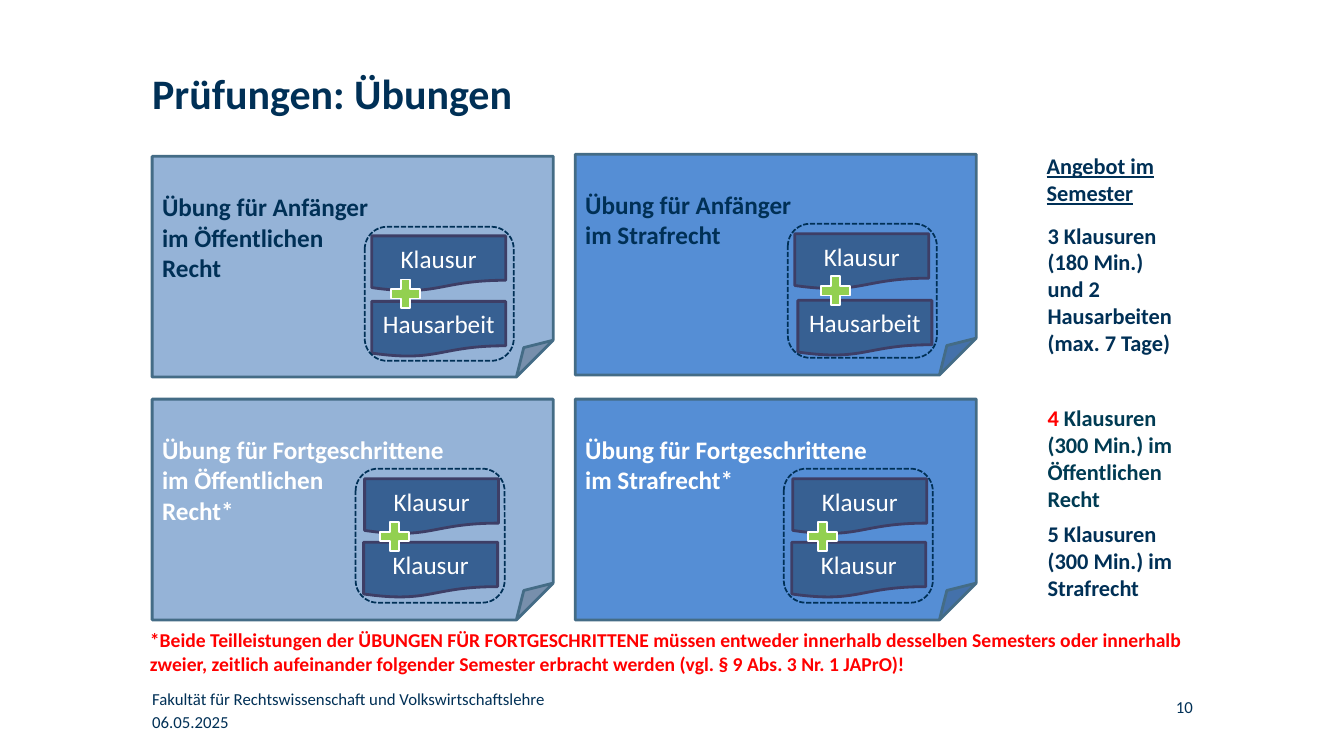
import pptx
import pptx.dml.color
import pptx.enum.dml
import pptx.enum.shapes
import pptx.enum.text
import pptx.util

SHAPE = pptx.enum.shapes.MSO_SHAPE
ALIGN = pptx.enum.text.PP_ALIGN
ANCHOR = pptx.enum.text.MSO_ANCHOR
WIDTH, HEIGHT = pptx.util.Inches(13.34), pptx.util.Inches(7.5)
MARGIN = 11.32
COLUMNS = (MARGIN, 42.8)
SIDE = 77.21
CARD_SIZE = (29.84, 29.2)
FRAME_SIZE = (11.09, 17.73)
PART_SIZE = (9.97, 7.33)
PLUS_SIZE = (2.92, 5.2)

COLOURS = {
    "navy": "003056", "teal": "003B53", "red": "FF0000", "white": "FFFFFF",
    "light": "95B3D7", "medium": "558ED5", "card_line": "446C86",
    "part": "376092", "part_line": "3D3E66", "plus": "92D050",
}

EXERCISES = [
    {"card": (COLUMNS[0], 20.67), "fill": "light", "colour": "navy",
     "lines": ["Übung für Anfänger", "im Öffentlichen", "Recht"],
     "frame": (27.14, 30), "plus": (1.57, 6.27),
     "parts": [("Klausur", 0.52, 1.2), ("Hausarbeit", 0.52, 9.87)]},
    {"card": (COLUMNS[1], 20.4), "fill": "medium", "colour": "navy",
     "lines": ["Übung für Anfänger", "im Strafrecht"],
     "frame": (58.62, 29.6), "plus": (2.1, 6.27),
     "parts": [("Klausur", 0.52, 1.33), ("Hausarbeit", 0.75, 10.13)]},
    {"card": (COLUMNS[0], 52.8), "fill": "light", "colour": "white",
     "lines": ["Übung für Fortgeschrittene", "im Öffentlichen", "Recht*"],
     "frame": (26.46, 62), "plus": (1.42, 6.4),
     "parts": [("Klausur", 0.67, 1.33), ("Klausur", 0.6, 9.73)]},
    {"card": (COLUMNS[1], 52.8), "fill": "medium", "colour": "white",
     "lines": ["Übung für Fortgeschrittene", "im Strafrecht*"],
     "frame": (58.32, 62), "plus": (1.42, 6.4),
     "parts": [("Klausur", 0.67, 1.33), ("Klausur", 0.6, 9.73)]},
]

NOTES = [
    ((SIDE - 0.07, 19.47), (11.24, 8.53), "Angebot im Semester", True),
    ((SIDE, 28.67), (11.24, 19.33),
     "3 Klausuren (180 Min.) und 2 Hausarbeiten (max. 7 Tage)", False),
    ((SIDE, 68.13), (11.24, 12.13), "5 Klausuren (300 Min.) im Strafrecht", False),
]

FOOTER = [
    ((MARGIN, 94.13), (23.31, 2.67), "06.05.2025", ALIGN.LEFT),
    ((MARGIN, 91.07), (31.63, 2.67),
     "Fakultät für Rechtswissenschaft und Volkswirtschaftslehre", ALIGN.LEFT),
    ((SIDE, 92.13), (11.54, 2.67), "10", ALIGN.RIGHT),
]

FOOTNOTE = (
    "*Beide Teilleistungen der ÜBUNGEN FÜR FORTGESCHRITTENE müssen entweder "
    "innerhalb desselben Semesters oder innerhalb zweier, zeitlich aufeinander "
    "folgender Semester erbracht werden (vgl. § 9 Abs. 3 Nr. 1 JAPrO)!"
)


def rgb(name):
    return pptx.dml.color.RGBColor.from_string(COLOURS[name])


def place(corner, size):
    return (int(WIDTH * corner[0] / 100), int(HEIGHT * corner[1] / 100),
            int(WIDTH * size[0] / 100), int(HEIGHT * size[1] / 100))


def shift(corner, offset):
    return corner[0] + offset[0], corner[1] + offset[1]


def clear_insets(frame):
    frame.margin_left = frame.margin_right = 0
    frame.margin_top = frame.margin_bottom = 0


def write(frame, lines, size, colour="navy", bold=False, align=ALIGN.LEFT,
          anchor=ANCHOR.TOP):
    frame.word_wrap = True
    frame.vertical_anchor = anchor
    frame.text = "\n".join(lines)
    for para in frame.paragraphs:
        para.alignment = align
        font = para.font
        font.name, font.size, font.bold = "Calibri", pptx.util.Pt(size), bold
        font.color.rgb = rgb(colour)


def add_text(page, corner, size, lines, points, **style):
    box = page.shapes.add_textbox(*place(corner, size))
    write(box.text_frame, lines, points, **style)
    return box.text_frame


def add_figure(page, kind, corner, size, fill, line, width):
    figure = page.shapes.add_shape(kind, *place(corner, size))
    figure.shadow.inherit = False
    if fill:
        figure.fill.solid()
        figure.fill.fore_color.rgb = rgb(fill)
    else:
        figure.fill.background()
    figure.line.color.rgb = rgb(line)
    figure.line.width = pptx.util.Pt(width)
    return figure


def add_title(page):
    title = page.shapes.title
    title.left, title.top, title.width, title.height = place(
        (MARGIN, 8.93), (52.92, 18.27))
    clear_insets(title.text_frame)
    write(title.text_frame, ["Prüfungen: Übungen"], 30, bold=True)


def add_card(page, exercise):
    card = add_figure(page, SHAPE.FOLDED_CORNER, exercise["card"], CARD_SIZE,
                      exercise["fill"], "card_line", 2)
    write(card.text_frame, exercise["lines"], 18, exercise["colour"], bold=True)
    card.text_frame.margin_top = int(HEIGHT * 0.0467)


def add_exam(page, exercise):
    corner = exercise["frame"]
    for label, *offset in exercise["parts"]:
        part = add_figure(page, SHAPE.FLOWCHART_DOCUMENT, shift(corner, offset),
                          PART_SIZE, "part", "part_line", 2)
        write(part.text_frame, [label], 18, "white", align=ALIGN.CENTER,
              anchor=ANCHOR.MIDDLE)
    frame = add_figure(page, SHAPE.ROUNDED_RECTANGLE, corner, FRAME_SIZE,
                       None, "navy", 1.25)
    frame.line.dash_style = pptx.enum.dml.MSO_LINE.SQUARE_DOT
    add_figure(page, SHAPE.MATH_PLUS, shift(corner, exercise["plus"]), PLUS_SIZE,
               "plus", "white", 1.25)


def add_notes(page):
    for corner, size, text, underline in NOTES:
        frame = add_text(page, corner, size, [text], 16, bold=True)
        frame.paragraphs[0].font.underline = underline
    frame = add_text(page, (SIDE, 52.8), (11.92, 15.73),
                     ["", "(300 Min.) im Öffentlichen Recht"], 16,
                     colour="teal", bold=True)
    for text, colour in (("4", "red"), (" Klausuren", "teal")):
        span = frame.paragraphs[0].add_run()
        span.text = text
        span.font.color.rgb = rgb(colour)


def add_footer(page):
    for corner, size, text, align in FOOTER:
        clear_insets(add_text(page, corner, size, [text], 12, align=align))


def main():
    deck = pptx.Presentation()
    deck.slide_width, deck.slide_height = WIDTH, HEIGHT
    page = deck.slides.add_slide(deck.slide_layouts[5])
    add_title(page)
    add_footer(page)
    for exercise in EXERCISES:
        add_card(page, exercise)
        add_exam(page, exercise)
    add_notes(page)
    add_text(page, (10.42, 82.4), (80.88, 11.73), [FOOTNOTE], 14,
             colour="red", bold=True)
    deck.save("out.pptx")


if __name__ == "__main__":
    main()
